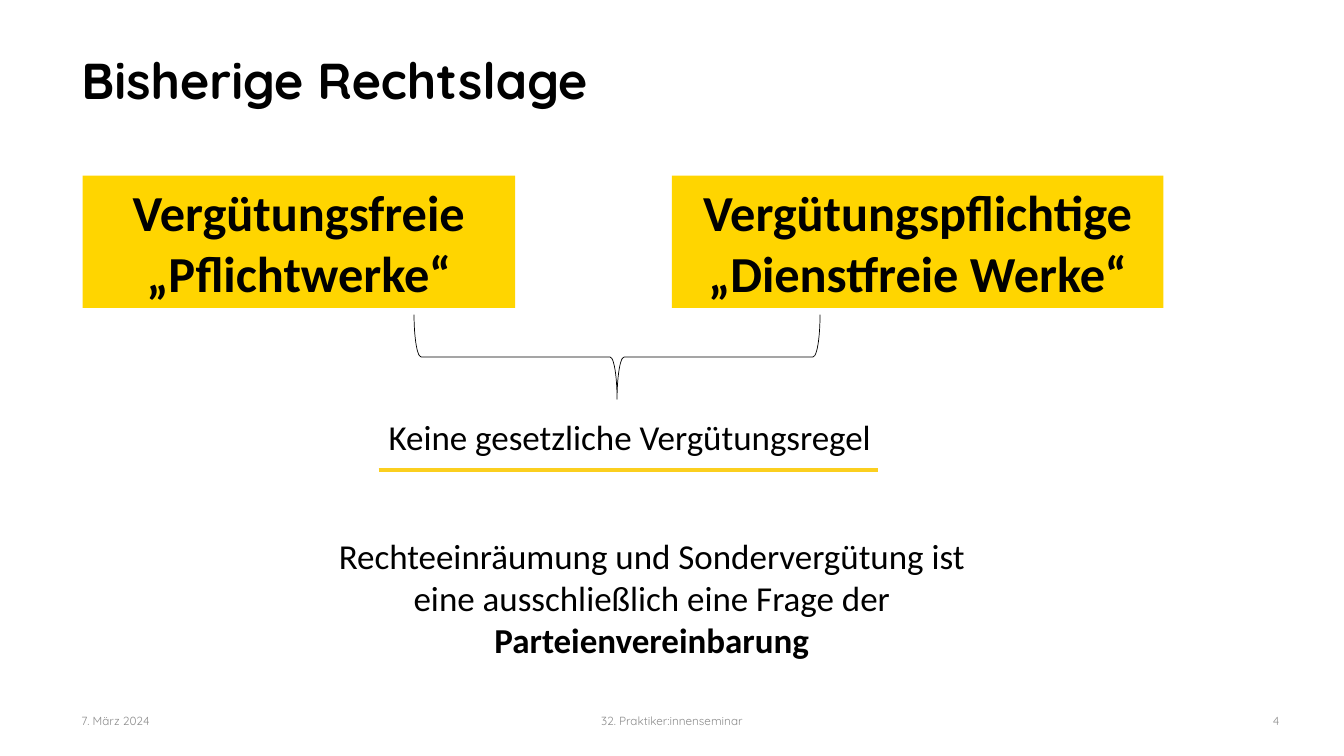
"""Build the slide on the previous legal position regarding remuneration."""
from lxml.etree import SubElement
from pptx import Presentation
from pptx.dml.color import RGBColor
from pptx.enum.shapes import MSO_CONNECTOR as CONN, MSO_SHAPE as SHAPE
from pptx.enum.text import MSO_ANCHOR as ANCHOR, MSO_AUTO_SIZE as AUTO, PP_ALIGN as ALIGN
from pptx.oxml.ns import qn
from pptx.util import Pt

COLORS = {"black": "000000", "grey": "8C8C8C", "yellow": "FFD500", "rule": "FBCF1F"}
HEAD, BODY = "Quicksand", "Calibri"

TITLE = "Bisherige Rechtslage"
WORKS = [
    ("Vergütungsfreie „Pflichtwerke“", 59, 309),
    ("Vergütungspflichtige „Dienstfreie Werke“", 480, 351),
]
RULE_TEXT = [("Keine gesetzliche Vergütungsregel", False)]
RESULT = [
    ("Rechteeinräumung und Sondervergütung ist eine ausschließlich eine Frage der ", False),
    ("Parteienvereinbarung", True),
]
FOOTERS = [
    ("7. März 2024", 51, 98, ALIGN.LEFT),
    ("32. Praktiker:innenseminar", 318, 324, ALIGN.CENTER),
    ("4", 768, 153, ALIGN.RIGHT),
]


def rgb(name):
    return RGBColor.from_string(COLORS[name])


def write(sp, runs, font, size, color="black", align=ALIGN.LEFT, anchor=ANCHOR.TOP):
    tf = sp.text_frame
    tf.word_wrap = True
    tf.auto_size = AUTO.NONE
    tf.vertical_anchor = anchor
    p = tf.paragraphs[0]
    p.alignment = align
    p.font.name, p.font.size = font, Pt(size)
    p.font.color.rgb = rgb(color)
    for text, bold in runs:
        r = p.add_run()
        r.text = text
        r.font.bold = bold
    return p


def add_text(s, box, *args, **kwargs):
    return write(s.shapes.add_textbox(*map(Pt, box)), *args, **kwargs)


def main():
    prs = Presentation()
    prs.slide_width, prs.slide_height = Pt(960), Pt(540)
    s = prs.slides.add_slide(prs.slide_layouts[5])

    title = s.shapes.title
    title.left, title.top, title.width, title.height = map(Pt, (51, 34, 762, 104))
    write(title, [(TITLE, True)], HEAD, 36).line_spacing = Pt(40.8)

    for text, left, width, align in FOOTERS:
        add_text(s, (left, 500.5, width, 29), [(text, False)], HEAD, 8.4, "grey", align, ANCHOR.MIDDLE)

    for text, left, width in WORKS:
        sp = s.shapes.add_shape(SHAPE.RECTANGLE, Pt(left), Pt(125.5), Pt(width), Pt(94.5))
        sp.shadow.inherit = False
        sp.fill.solid()
        sp.fill.fore_color.rgb = rgb("yellow")
        sp.line.fill.background()
        p = write(sp, [(text, True)], BODY, 36, align=ALIGN.CENTER, anchor=ANCHOR.MIDDLE)
        p.space_after = Pt(4.2)

    brace = s.shapes.add_shape(SHAPE.RIGHT_BRACE, Pt(410.5), Pt(110), Pt(60.5), Pt(290))
    brace.rotation = 90
    brace.shadow.inherit = False
    brace.fill.background()
    brace.line.color.rgb = rgb("black")
    brace.line.width = Pt(0.5)

    add_text(s, (225.5, 378, 480, 98), RESULT, BODY, 25, align=ALIGN.CENTER)
    add_text(s, (270.5, 293.5, 480, 37.5), RULE_TEXT, BODY, 25)

    line = s.shapes.add_connector(CONN.STRAIGHT, Pt(270.5), Pt(336), Pt(627), Pt(336))
    line.line.color.rgb = rgb("rule")
    line.line.width = Pt(3)
    SubElement(line.element.spPr, qn("a:effectLst"))

    prs.save("out.pptx")


if __name__ == "__main__":
    main()
